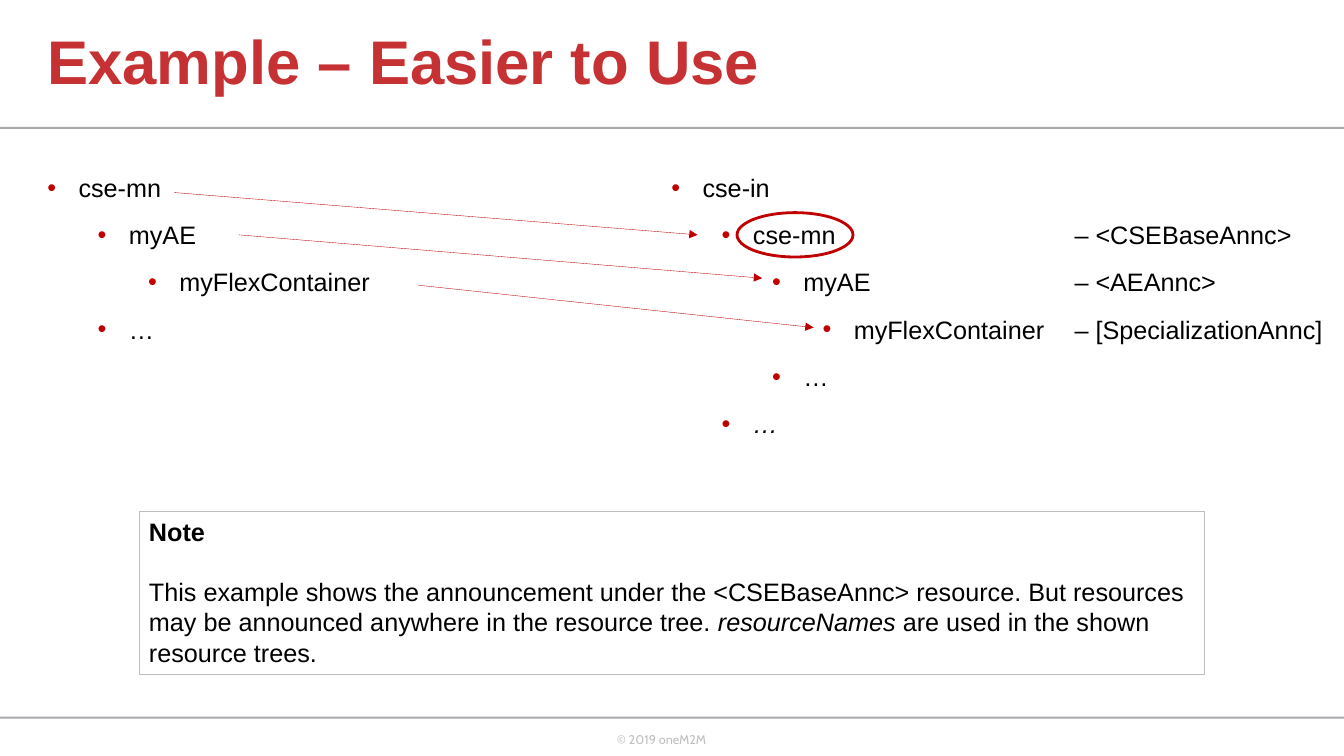
from dataclasses import dataclass

from lxml.etree import SubElement
from pptx import Presentation
from pptx.dml.color import RGBColor
from pptx.enum.shapes import MSO_CONNECTOR, MSO_SHAPE
from pptx.enum.text import MSO_ANCHOR, PP_ALIGN
from pptx.oxml.ns import qn
from pptx.util import Inches, Pt

WIDTH, HEIGHT = Inches(13.33), Inches(7.5)


@dataclass(frozen=True)
class Theme:
    title: str = "C63133"
    text: str = "000000"
    accent: str = "C00000"
    arrow: str = "BC0000"
    rule: str = "A7A9AC"
    pale: str = "BFBFBF"
    font: str = "Arial"
    footer_font: str = "Cabin"
    title_size: int = 44
    body_size: int = 18
    footer_size: int = 9


THEME = Theme()


def across(percent):
    return int(WIDTH * percent / 100)


def down(percent):
    return int(HEIGHT * percent / 100)


def box(left, top, width, height):
    return across(left), down(top), across(width), down(height)


def style(paragraph, size=THEME.body_size, color=THEME.text, name=THEME.font, bold=False):
    paragraph.font.size = Pt(size)
    paragraph.font.color.rgb = RGBColor.from_string(color)
    paragraph.font.name = name
    paragraph.font.bold = bold


def add_title(slide, wording):
    title = slide.shapes.title
    title.left, title.top, title.width, title.height = box(2.78, 0, 73.14, 17.07)
    frame = title.text_frame
    frame.text = wording
    frame.vertical_anchor = MSO_ANCHOR.MIDDLE
    heading = frame.paragraphs[0]
    heading.alignment = PP_ALIGN.LEFT
    heading.line_spacing = 0.9
    style(heading, THEME.title_size, THEME.title, bold=True)


def add_figure(slide, kind, area, fill=None, line=None, weight=0.75):
    figure = slide.shapes.add_shape(kind, *box(*area))
    figure.shadow.inherit = False
    if fill:
        figure.fill.solid()
        figure.fill.fore_color.rgb = RGBColor.from_string(fill)
    else:
        figure.fill.background()
    if line:
        figure.line.color.rgb = RGBColor.from_string(line)
        figure.line.width = Pt(weight)
    else:
        figure.line.fill.background()
    return figure


def add_footer(slide, wording):
    frame = slide.shapes.add_textbox(*box(45.16, 96.13, 9.6, 3.87)).text_frame
    frame.word_wrap = True
    frame.text = wording
    style(frame.paragraphs[0], THEME.footer_size, THEME.pale, THEME.footer_font)


def set_bullet(paragraph, level, tab):
    properties = paragraph._p.get_or_add_pPr()
    properties.set("marL", str(Inches(0.31 + 0.5 * level)))
    properties.set("indent", str(Inches(-0.31)))
    bullet_color = SubElement(properties, qn("a:buClr"))
    SubElement(bullet_color, qn("a:srgbClr"), val=THEME.accent)
    SubElement(properties, qn("a:buFont"), typeface=THEME.font)
    SubElement(properties, qn("a:buChar"), char="•")
    if tab:
        stops = SubElement(properties, qn("a:tabLst"))
        SubElement(stops, qn("a:tab"), pos=str(tab), algn="l")


def add_tree(slide, area, resources):
    frame = slide.shapes.add_textbox(*box(*area)).text_frame
    frame.word_wrap = True
    for row, (level, name, kind) in enumerate(resources):
        entry = frame.add_paragraph() if row else frame.paragraphs[0]
        entry.level = level
        entry.add_run().text = f"{name}\t– {kind}" if kind else name
        set_bullet(entry, level, across(30) if kind else None)
        entry.line_spacing = 1.1
        if row:
            entry.space_before = Pt(10)
        style(entry)
    return frame


def add_arrow(slide, start, end):
    arrow = slide.shapes.add_connector(
        MSO_CONNECTOR.STRAIGHT,
        across(start[0]), down(start[1]), across(end[0]), down(end[1]),
    )
    arrow.line.color.rgb = RGBColor.from_string(THEME.arrow)
    arrow.line.width = Pt(0.25)
    SubElement(arrow.line._get_or_add_ln(), qn("a:tailEnd"), type="triangle")
    SubElement(arrow._element.spPr, qn("a:effectLst"))


def add_note(slide, heading, sentence):
    note = add_figure(slide, MSO_SHAPE.RECTANGLE, (10.35, 67.6, 79.29, 21.6), line=THEME.pale)
    frame = note.text_frame
    frame.word_wrap = True
    frame.vertical_anchor = MSO_ANCHOR.TOP
    frame.text = heading
    label = frame.paragraphs[0]
    label.alignment = PP_ALIGN.LEFT
    label.space_after = Pt(21.5)
    style(label, bold=True)
    body = frame.add_paragraph()
    body.alignment = PP_ALIGN.LEFT
    style(body)
    for wording, italic in sentence:
        run = body.add_run()
        run.text = wording
        if italic:
            run.font.italic = True


def main():
    deck = Presentation()
    deck.slide_width, deck.slide_height = WIDTH, HEIGHT
    slide = deck.slides.add_slide(deck.slide_layouts[5])

    for rule_top in (16.8, 94.8):
        add_figure(slide, MSO_SHAPE.RECTANGLE, (0, rule_top, 100, 0.27), fill=THEME.rule)
    add_footer(slide, "© 2019 oneM2M")
    add_title(slide, "Example – Easier to Use")

    add_tree(slide, (2.78, 21.73, 39.68, 73.07), [
        (0, "cse-mn", None),
        (1, "myAE", None),
        (2, "myFlexContainer", None),
        (1, "…", None),
    ])
    announced = add_tree(slide, (49.21, 21.73, 50.26, 73.07), [
        (0, "cse-in", None),
        (1, "cse-mn", "<CSEBaseAnnc>"),
        (2, "myAE", "<AEAnnc>"),
        (3, "myFlexContainer", "[SpecializationAnnc]"),
        (2, "…", None),
        (1, "…", None),
    ])
    announced.paragraphs[-1].font.italic = True

    for start, end in (
        ((12.98, 25.47), (51.91, 31.07)),
        ((17.78, 31.07), (56.71, 36.8)),
        ((31.13, 37.73), (60.54, 43.33)),
    ):
        add_arrow(slide, start, end)
    add_figure(slide, MSO_SHAPE.OVAL, (54.84, 28.13, 8.63, 5.87), line=THEME.accent, weight=2)

    add_note(slide, "Note", [
        ("This example shows the announcement under the <CSEBaseAnnc> resource. "
         "But resources may be announced anywhere in the resource tree. ", False),
        ("resourceNames", True),
        (" are used in the shown resource trees.", False),
    ])
    deck.save("out.pptx")


if __name__ == "__main__":
    main()
